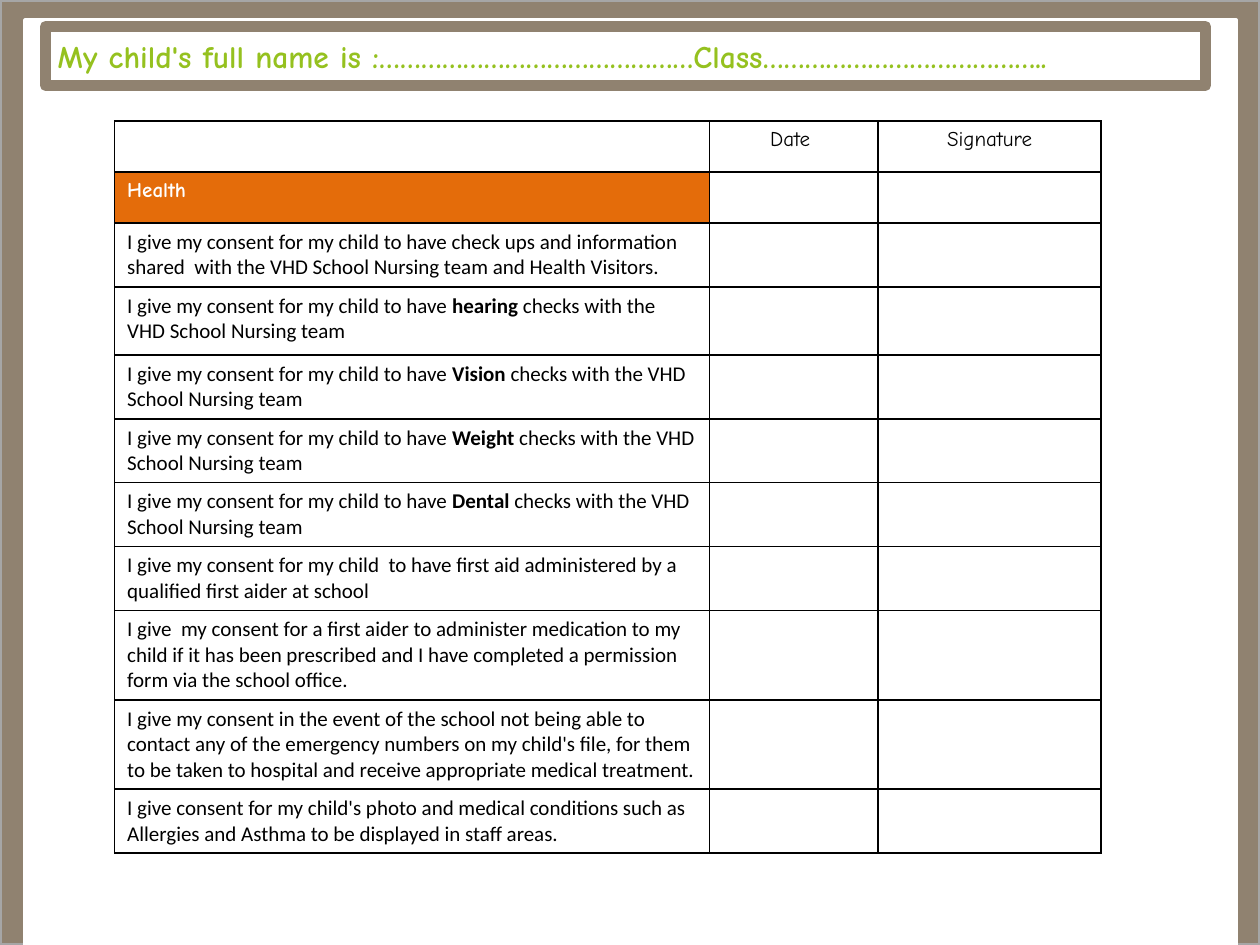
import dataclasses

import pptx
import pptx.dml.color
import pptx.enum.shapes
import pptx.enum.text
import pptx.oxml
import pptx.oxml.ns
import pptx.util
from pptx.util import Inches


@dataclasses.dataclass(frozen=True)
class Theme:
    """Colours, fonts and type sizes of the form."""

    taupe: str = "908270"
    grey: str = "A6A6A6"
    white: str = "FFFFFF"
    black: str = "000000"
    orange: str = "E46C0A"
    green: str = "95C11F"
    display: str = "Comic Neue"
    body: str = "Calibri"
    title_size: int = 18
    table_size: int = 12


THEME = Theme()
COLUMNS = (4.72, 1.34, 1.77)
CHECK = "I give my consent for my child to have *{}* checks with the VHD School Nursing team"
CONSENTS = [
    (0.5, "I give my consent for my child to have check ups and information shared  with the VHD School Nursing team and Health Visitors."),
    (0.54, CHECK.format("hearing")),
    (0.5, CHECK.format("Vision")),
    (0.5, CHECK.format("Weight")),
    (0.5, CHECK.format("Dental")),
    (0.5, "I give my consent for my child  to have first aid administered by a qualified first aider at school"),
    (0.7, "I give  my consent for a first aider to administer medication to my child if it has been prescribed and I have completed a permission form via the school office."),
    (0.7, "I give my consent in the event of the school not being able to contact any of the emergency numbers on my child's file, for them to be taken to hospital and receive appropriate medical treatment."),
    (0.5, "I give consent for my child's photo and medical conditions such as Allergies and Asthma to be displayed in staff areas."),
]


def rgb(value):
    """Turn a hex string into a colour."""
    return pptx.dml.color.RGBColor.from_string(value)


def write_text(frame, text, *, font, size, color=THEME.black, bold=False, align="LEFT"):
    """Write one paragraph; words between asterisks switch the weight."""
    para = frame.paragraphs[0]
    para.alignment = getattr(pptx.enum.text.PP_ALIGN, align)
    for index, part in enumerate(text.split("*")):
        span = para.add_run()
        span.text = part
        span.font.name = font
        span.font.size = pptx.util.Pt(size)
        span.font.bold = bold != bool(index % 2)
        span.font.color.rgb = rgb(color)


def add_panel(page, left, top, width, height, fill, line, line_width):
    """Add an outlined rectangle."""
    kind = pptx.enum.shapes.MSO_SHAPE.RECTANGLE
    box = page.shapes.add_shape(kind, Inches(left), Inches(top), Inches(width), Inches(height))
    box.shadow.inherit = False
    box.fill.solid()
    box.fill.fore_color.rgb = rgb(fill)
    box.line.color.rgb = rgb(line)
    box.line.width = pptx.util.Pt(line_width)
    return box


def style_cell(cell, fill=None):
    """Give a cell thin black borders and an optional fill."""
    properties = cell._tc.get_or_add_tcPr()
    for side in ("lnL", "lnR", "lnT", "lnB"):
        properties.append(pptx.oxml.parse_xml(
            f'<a:{side} {pptx.oxml.ns.nsdecls("a")} w="{pptx.util.Pt(1)}"><a:solidFill>'
            f'<a:srgbClr val="{THEME.black}"/></a:solidFill></a:{side}>'))
    if fill:
        cell.fill.solid()
        cell.fill.fore_color.rgb = rgb(fill)
    else:
        cell.fill.background()


def add_consent_table(page):
    """Add the consent table with date and signature columns."""
    heights = [0.4, 0.4] + [height for height, text in CONSENTS]
    table = page.shapes.add_table(
        len(heights), len(COLUMNS), Inches(0.91), Inches(0.96),
        Inches(sum(COLUMNS)), Inches(sum(heights))).table
    table.first_row = table.horz_banding = False
    for column, width in zip(table.columns, COLUMNS):
        column.width = Inches(width)
    for row, height in zip(table.rows, heights):
        row.height = Inches(height)
    health = table.cell(1, 0)
    for cell in table.iter_cells():
        style_cell(cell, THEME.orange if cell == health else None)
    size = THEME.table_size
    for index, heading in enumerate(("Date ", "Signature"), start=1):
        write_text(table.cell(0, index).text_frame, heading,
                   font=THEME.display, size=size, align="CENTER")
    write_text(health.text_frame, "Health", font=THEME.display, size=size,
               color=THEME.white, bold=True)
    for index, (height, text) in enumerate(CONSENTS, start=2):
        write_text(table.cell(index, 0).text_frame, text, font=THEME.body, size=size)


def add_name_banner(page):
    """Add the framed line for the child's name and class."""
    banner = add_panel(page, 0.36, 0.21, 9.21, 0.47, THEME.white, THEME.taupe, 6)
    frame = banner.text_frame
    frame.word_wrap = True
    frame.vertical_anchor = pptx.enum.text.MSO_ANCHOR.MIDDLE
    write_text(frame, "My child's full name is :………………………………………Class…………………………………..",
               font=THEME.display, size=THEME.title_size, color=THEME.green, bold=True)


def main():
    """Build and save the consent form."""
    deck = pptx.Presentation()
    deck.slide_width, deck.slide_height = Inches(10), Inches(7.5)
    page = deck.slides.add_slide(deck.slide_layouts[6])
    add_panel(page, 0, 0, 10, 7.5, THEME.taupe, THEME.grey, 2)
    add_panel(page, 0.2, 0.16, 9.61, 7.34, THEME.white, THEME.white, 2)
    add_consent_table(page)
    add_name_banner(page)
    deck.save("out.pptx")


if __name__ == "__main__":
    main()
